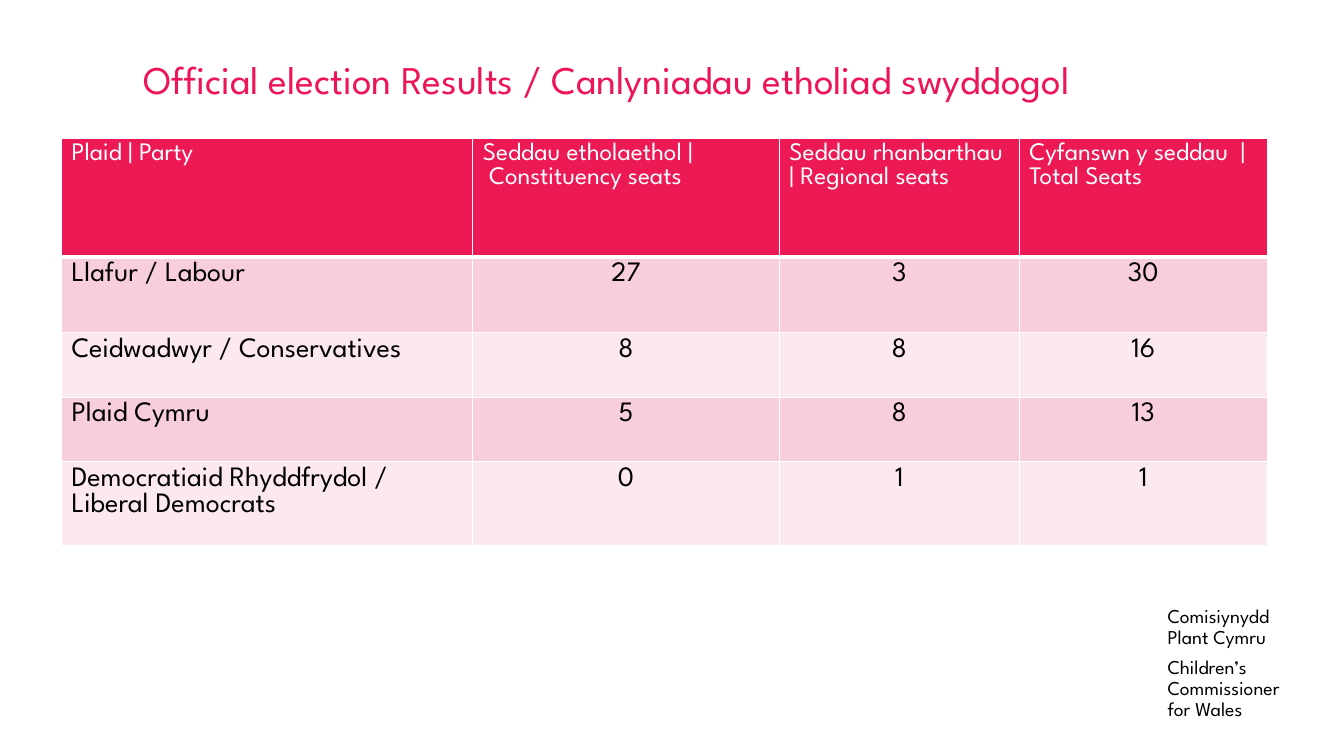
from lxml import etree
from pptx import Presentation
from pptx.dml.color import RGBColor
from pptx.enum.text import MSO_ANCHOR, PP_ALIGN
from pptx.oxml.ns import qn
from pptx.util import Pt

PX = 9144  # EMU per px, 100 px to the inch
FONT = "League Spartan"
LEFT, CENTER = PP_ALIGN.LEFT, PP_ALIGN.CENTER
TOP, MIDDLE = MSO_ANCHOR.TOP, MSO_ANCHOR.MIDDLE
COLORS = {
    "title": "ED1556",
    "header": "EC1955",
    "odd_row": "F8CEDD",
    "even_row": "FCE8EF",
    "white": "FFFFFF",
    "black": "000000",
}


def style_paragraph(para, size, color, align=LEFT):
    para.alignment = align
    for span in para.runs:
        span.font.name = FONT
        span.font.size = Pt(size)
        span.font.color.rgb = RGBColor.from_string(COLORS[color])


def add_text(slide, bounds, paragraphs, size, color, anchor):
    """Add a text box without margins, one paragraph per string."""
    box = slide.shapes.add_textbox(*(value * PX for value in bounds))
    frame = box.text_frame
    frame.word_wrap = True
    frame.vertical_anchor = anchor
    frame.margin_left = frame.margin_right = 0
    frame.margin_top = frame.margin_bottom = 0
    for index, text in enumerate(paragraphs):
        para = frame.add_paragraph() if index else frame.paragraphs[0]
        para.text = text
        para.line_spacing = 0.9
        if index < len(paragraphs) - 1:
            para.space_after = Pt(6)
        style_paragraph(para, size, color)


deck = Presentation()
deck.slide_width = 1333 * PX
deck.slide_height = 750 * PX
slide = deck.slides.add_slide(deck.slide_layouts[6])

add_text(
    slide, (1158, 601, 138, 115),
    ["Comisiynydd\nPlant Cymru", "Children’s\nCommissioner\nfor Wales"],
    14, "black", MIDDLE,
)
add_text(
    slide, (142, 60, 1115, 61),
    ["Official election Results / Canlyniadau etholiad swyddogol"],
    28, "title", TOP,
)

column_widths = [408, 304, 238, 246]
row_heights = [118, 75, 64, 64, 83]
results = [
    ["Plaid | Party", "Seddau etholaethol |\n Constituency seats",
     "Seddau rhanbarthau | Regional seats", "Cyfanswn y seddau  | Total Seats"],
    ["Llafur / Labour", "27", "3", "30"],
    ["Ceidwadwyr / Conservatives", "8", "8", "16"],
    ["Plaid Cymru", "5", "8", "13"],
    ["Democratiaid Rhyddfrydol / Liberal Democrats", "0", "1", "1"],
]
table = slide.shapes.add_table(
    len(row_heights), len(column_widths), 61 * PX, 137 * PX,
    sum(column_widths) * PX, sum(row_heights) * PX,
).table
for column, width in zip(table.columns, column_widths):
    column.width = width * PX
for row, height in zip(table.rows, row_heights):
    row.height = height * PX

for row_index, values in enumerate(results):
    is_header = row_index == 0
    if is_header:
        fill, size, color = "header", 18, "white"
    else:
        fill, size, color = "odd_row" if row_index % 2 else "even_row", 20, "black"
    for column_index, value in enumerate(values):
        cell = table.cell(row_index, column_index)
        cell.text_frame.text = value
        align = LEFT if is_header or column_index == 0 else CENTER
        for para in cell.text_frame.paragraphs:
            style_paragraph(para, size, color, align)

        # Borders go before the fill in the cell properties
        properties = cell._tc.get_or_add_tcPr()
        for side in ("lnL", "lnR", "lnT", "lnB"):
            below_header = (row_index, side) in ((0, "lnB"), (1, "lnT"))
            border = etree.SubElement(
                properties, qn(f"a:{side}"), w=str(Pt(3 if below_header else 1)))
            solid = etree.SubElement(border, qn("a:solidFill"))
            etree.SubElement(solid, qn("a:srgbClr"), val=COLORS["white"])
        cell.fill.solid()
        cell.fill.fore_color.rgb = RGBColor.from_string(COLORS[fill])

deck.save("out.pptx")
